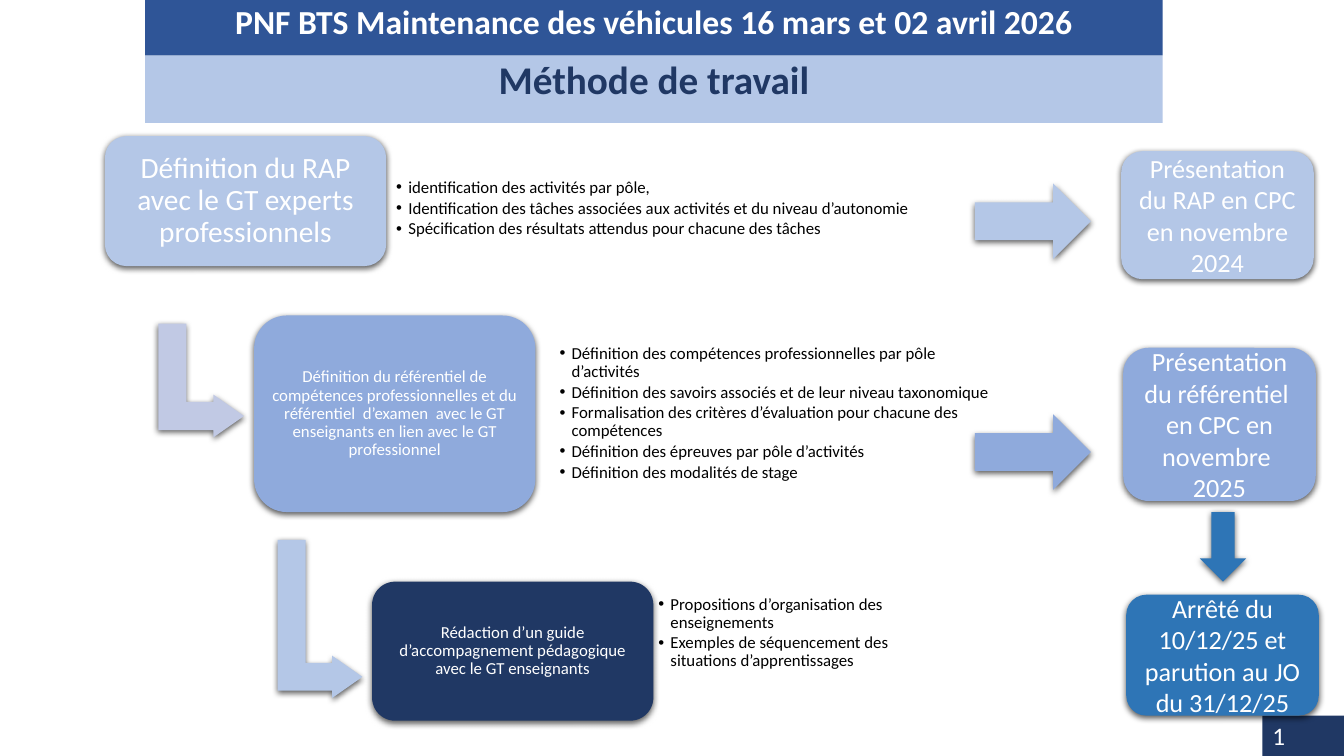
from lxml.etree import SubElement
from pptx import Presentation
from pptx.dml.color import RGBColor
from pptx.enum.shapes import MSO_SHAPE
from pptx.enum.text import MSO_ANCHOR, MSO_AUTO_SIZE, PP_ALIGN
from pptx.oxml import parse_xml
from pptx.oxml.ns import nsdecls, qn
from pptx.util import Inches, Pt

WHITE = RGBColor(0xFF, 0xFF, 0xFF)
BLACK = RGBColor(0, 0, 0)
NAVY = RGBColor(0x20, 0x38, 0x64)
BANNER = RGBColor(0x2F, 0x55, 0x97)
PALE = RGBColor(0xB4, 0xC7, 0xE7)
MID = RGBColor(0x8F, 0xAA, 0xDC)
STRONG = RGBColor(0x2E, 0x75, 0xB6)
LILAC = RGBColor(0xC1, 0xC9, 0xE4)

BANNER_TEXT = "PNF BTS Maintenance des véhicules 16 mars et 02 avril 2026"
TITLE = "Méthode de travail"

STEPS = [
    ("Définition du RAP avec le GT experts professionnels",
     (1.04, 1.35, 2.79, 1.29), PALE, 21, 0.09),
    ("Définition du référentiel de compétences professionnelles et du référentiel  "
     "d’examen  avec le GT enseignants en lien avec le GT professionnel",
     (2.52, 3.13, 2.79, 1.95), MID, 12, 0.05),
    ("Rédaction d’un guide d’accompagnement pédagogique avec le GT enseignants",
     (3.69, 5.77, 2.79, 1.38), NAVY, 12, 0.05),
]
DETAILS = [
    ((3.88, 1.62, 6.98, 0.9), [
        "identification des activités par pôle,",
        "Identification des tâches associées aux activités et du niveau d’autonomie",
        "Spécification des résultats attendus pour chacune des tâches"]),
    ((5.5, 3.31, 4.47, 1.58), [
        "Définition des compétences professionnelles par pôle d’activités",
        "Définition des savoirs associés et de leur niveau taxonomique",
        "Formalisation des critères d’évaluation pour chacune des compétences",
        "Définition des épreuves par pôle d’activités",
        "Définition des modalités de stage"]),
    ((6.48, 5.49, 2.78, 1.58), [
        "Propositions d’organisation des enseignements",
        "Exemples de séquencement des situations d’apprentissages"]),
]
MILESTONES = [
    ("Présentation du RAP en CPC en novembre 2024", (11.12, 1.5, 1.91, 1.27), PALE),
    ("Présentation du référentiel  en CPC en novembre  2025",
     (11.14, 3.45, 1.91, 1.52), MID),
    ("Arrêté du 10/12/25 et parution au JO du 31/12/25",
     (11.17, 5.9, 1.91, 1.2), STRONG),
]
ARROWS = [
    (MSO_SHAPE.RIGHT_ARROW, (9.67, 1.82, 1.15, 0.75), PALE),
    (MSO_SHAPE.RIGHT_ARROW, (9.67, 4.11, 1.15, 0.75), MID),
    (MSO_SHAPE.DOWN_ARROW, (11.9, 5.08, 0.46, 0.69), STRONG),
]
ELBOWS = [((1.43, 3.35, 1.13, 0.85), LILAC), ((2.39, 5.72, 1.57, 0.84), PALE)]
ELBOW_ADJUST = (0.328, 0.25, 0.358)


def apply(obj, **values):
    for name, value in values.items():
        setattr(obj, name, value)


def add_shape(slide, kind, box, color, shadow=True):
    sp = slide.shapes.add_shape(kind, *map(Inches, box))
    sp.fill.solid()
    sp.fill.fore_color.rgb = color
    sp.line.fill.background()
    sp.shadow.inherit = False
    if shadow:
        effects = sp._element.spPr.find(qn("a:effectLst"))
        effects.append(parse_xml(
            f'<a:outerShdw {nsdecls("a")} blurRad="{Pt(4.5)}" dist="{Pt(1.5)}" '
            'dir="5400000" algn="ctr" rotWithShape="0"><a:srgbClr val="000000">'
            '<a:alpha val="63000"/></a:srgbClr></a:outerShdw>'))
    return sp


def format_frame(tf, anchor=MSO_ANCHOR.MIDDLE, inset=None):
    apply(tf, word_wrap=True, auto_size=MSO_AUTO_SIZE.NONE, vertical_anchor=anchor)
    sides = (inset,) * 4 if inset else (0.1, 0.05, 0.1, 0.05)
    for side, value in zip(("left", "top", "right", "bottom"), sides):
        setattr(tf, f"margin_{side}", Inches(value))


def write(p, text, size, color=WHITE, align=PP_ALIGN.CENTER, spacing=1.0, bold=False):
    apply(p, alignment=align, line_spacing=spacing)
    r = p.add_run()
    r.text = text
    apply(r.font, name="Calibri", size=Pt(size), bold=bold)
    r.font.color.rgb = color
    return r


def add_bullets(slide, box, items):
    tf = slide.shapes.add_textbox(*map(Inches, box)).text_frame
    format_frame(tf, inset=0.05)
    for i, item in enumerate(items):
        p = tf.add_paragraph() if i else tf.paragraphs[0]
        write(p, item, 12, BLACK, PP_ALIGN.LEFT, 0.9)
        p.space_after = Pt(1.8)
        pPr = p._p.get_or_add_pPr()
        pPr.set("marL", str(Inches(0.12)))
        pPr.set("indent", str(Inches(-0.12)))
        SubElement(pPr, qn("a:buFont")).set("typeface", "Arial")
        SubElement(pPr, qn("a:buChar")).set("char", "•")


def add_page_number(slide):
    sp = add_shape(slide, MSO_SHAPE.RECTANGLE, (12.52, 7.1, 0.82, 0.4), NAVY, False)
    tf = sp.text_frame
    format_frame(tf, MSO_ANCHOR.TOP)
    r = write(tf.paragraphs[0], "5", 18, align=PP_ALIGN.LEFT)._r
    field = parse_xml(f'<a:fld {nsdecls("a")} type="slidenum" '
                      'id="{B6F15528-21DE-4FAA-801E-634DDDAF4B2B}"/>')
    r.addprevious(field)
    field.extend(list(r))
    r.getparent().remove(r)


def add_headings(slide):
    banner = add_shape(slide, MSO_SHAPE.RECTANGLE, (1.44, 0, 10.09, 0.55), BANNER, False)
    format_frame(banner.text_frame, MSO_ANCHOR.TOP)
    write(banner.text_frame.paragraphs[0], BANNER_TEXT, 24, spacing=0.9, bold=True)
    title = slide.shapes.title
    apply(title, left=Inches(1.44), top=Inches(0.55), width=Inches(10.09),
          height=Inches(0.67))
    title.fill.solid()
    title.fill.fore_color.rgb = PALE
    format_frame(title.text_frame, MSO_ANCHOR.TOP)
    write(title.text_frame.paragraphs[0], TITLE, 28, NAVY, spacing=0.9, bold=True)


def main():
    """Build the working-method slide."""
    prs = Presentation()
    apply(prs, slide_width=Inches(13.33), slide_height=Inches(7.5))
    slide = prs.slides.add_slide(prs.slide_layouts[5])
    add_page_number(slide)
    add_headings(slide)
    for box, color in ELBOWS:
        sp = add_shape(slide, MSO_SHAPE.BENT_UP_ARROW, box, color)
        sp.rotation = 90
        for i, value in enumerate(ELBOW_ADJUST):
            sp.adjustments[i] = value
    for text, box, color, size, inset in STEPS:
        tf = add_shape(slide, MSO_SHAPE.ROUNDED_RECTANGLE, box, color).text_frame
        format_frame(tf, inset=inset)
        write(tf.paragraphs[0], text, size, spacing=0.9)
    for box, items in DETAILS:
        add_bullets(slide, box, items)
    for kind, box, color in ARROWS:
        add_shape(slide, kind, box, color)
    for text, box, color in MILESTONES:
        tf = add_shape(slide, MSO_SHAPE.ROUNDED_RECTANGLE, box, color).text_frame
        format_frame(tf)
        write(tf.paragraphs[0], text, 18.7)
    prs.save("out.pptx")


if __name__ == "__main__":
    main()
